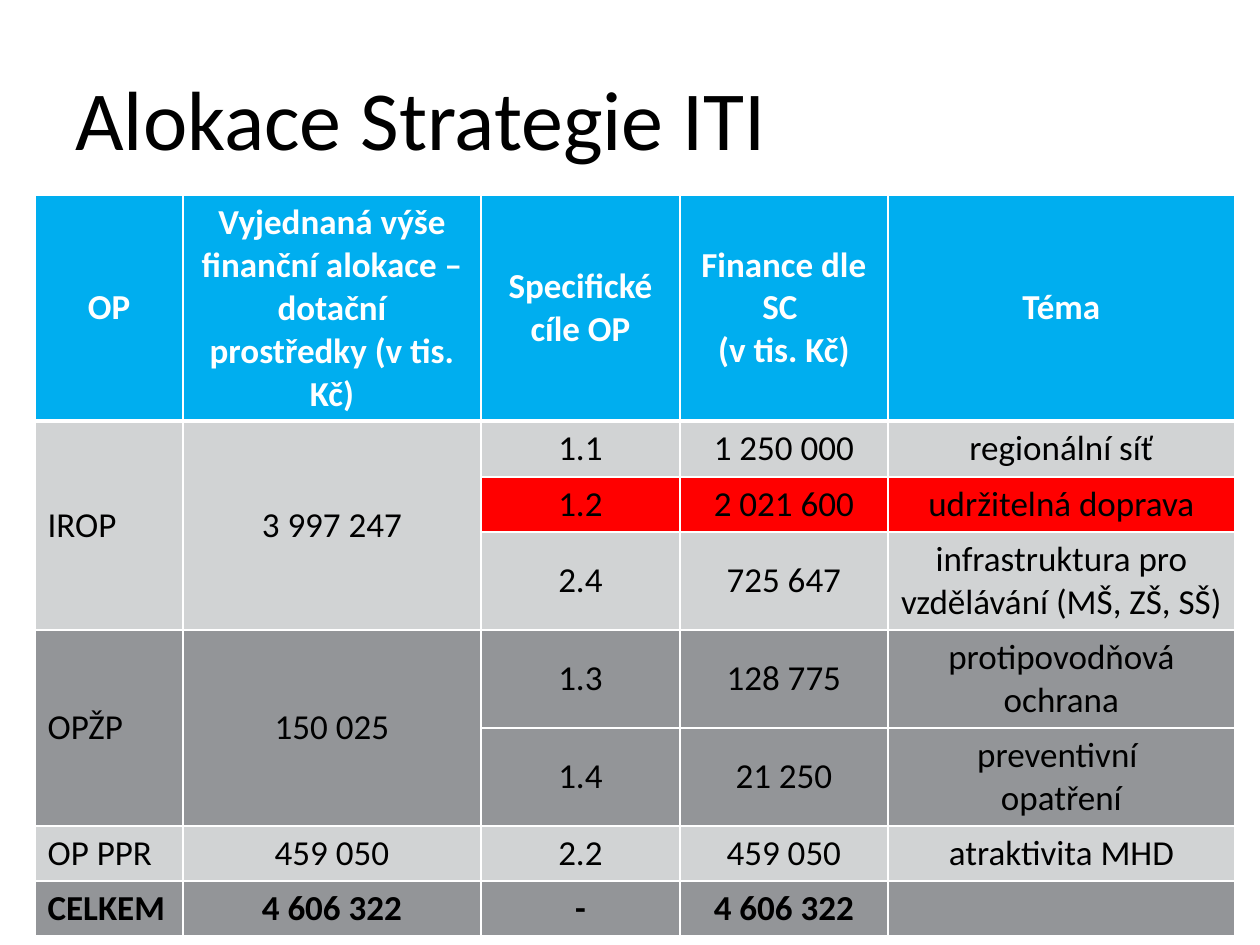
from dataclasses import dataclass

from lxml import etree
from pptx import Presentation, util as u
from pptx.dml.color import RGBColor
from pptx.enum import text
from pptx.oxml.ns import qn

PX = 914400 // 126


@dataclass(frozen=True)
class Theme:
    """Colours, font and type sizes of the slide."""
    font: str = "Calibri"
    title: int = 48
    body: int = 20
    black: str = "000000"
    white: str = "FFFFFF"
    blue: str = "00AEEF"
    light: str = "D1D3D4"
    dark: str = "939598"
    red: str = "FF0000"


T = Theme()
COLUMNS = [148, 298, 199, 208, 347]
HEADER = ["OP", "Vyjednaná výše finanční alokace – dotační prostředky (v tis. Kč)",
          "Specifické cíle OP", "Finance dle SC \v(v tis. Kč)", "Téma"]
ROWS = [
    (226, T.blue, HEADER),
    (56, T.light, ["IROP", "3 997 247", "1.1", "1 250 000", "regionální síť"]),
    (55, T.red, ["", "", "1.2", "2 021 600", "udržitelná doprava"]),
    (98, T.light, ["", "", "2.4", "725 647", "infrastruktura pro vzdělávání (MŠ, ZŠ, SŠ)"]),
    (98, T.dark, ["OPŽP", "150 025", "1.3", "128 775", "protipovodňová ochrana"]),
    (98, T.dark, ["", "", "1.4", "21 250", "preventivní \nopatření"]),
    (55, T.light, ["OP PPR", "459 050", "2.2", "459 050", "atraktivita MHD"]),
    (55, T.dark, ["CELKEM", "4 606 322", "-", "4 606 322", ""]),
]
MERGED_ROWS = [(1, 3), (4, 5)]


def px(*values):
    """Turn pixel lengths into EMU."""
    return [u.Emu(v * PX) for v in values]


def format_text(tf, size, color, bold, align):
    """Apply one format to every paragraph of a text frame."""
    values = {"name": T.font, "size": u.Pt(size), "bold": bold}
    for p in tf.paragraphs:
        p.alignment = align
        for name, value in values.items():
            setattr(p.font, name, value)
        p.font.color.rgb = RGBColor.from_string(color)


def add_title(slide, words):
    """Add the slide heading."""
    tf = slide.shapes.add_textbox(*px(63, 38, 1134, 157)).text_frame
    tf.word_wrap = True
    tf.vertical_anchor = text.MSO_ANCHOR.MIDDLE
    tf.text = words
    format_text(tf, T.title, T.black, False, text.PP_ALIGN.LEFT)


def add_borders(cell, widths):
    """Draw white borders of the given point widths, keyed by side."""
    tc_pr = cell._tc.get_or_add_tcPr()
    for side, width in widths.items():
        ln = etree.SubElement(tc_pr, qn(f"a:ln{side}"), w=str(u.Pt(width)))
        fill = etree.SubElement(ln, qn("a:solidFill"))
        etree.SubElement(fill, qn("a:srgbClr"), val=T.white)


def fill_cell(cell, words, row, col, color):
    """Write and style one table cell."""
    header, total = row == 0, row == len(ROWS) - 1
    cell.text = words
    cell.vertical_anchor = text.MSO_ANCHOR.MIDDLE
    left = col == 0 and not header
    format_text(cell.text_frame, T.body, T.white if header else T.black, header or total,
                text.PP_ALIGN.LEFT if left else text.PP_ALIGN.CENTER)
    add_borders(cell, {"L": 1, "R": 1, "T": 3 if row == 1 else 1, "B": 3 if header else 1})
    cell.fill.solid()
    cell.fill.fore_color.rgb = RGBColor.from_string(color)


def add_allocation_table(slide):
    """Add the table of allocations by programme."""
    heights = [height for height, _, _ in ROWS]
    table = slide.shapes.add_table(len(ROWS), len(COLUMNS),
                                   *px(35, 195, sum(COLUMNS), sum(heights))).table
    table.horz_banding = False
    for column, width in zip(table.columns, px(*COLUMNS)):
        column.width = width
    for i, (height, color, words) in enumerate(ROWS):
        table.rows[i].height = px(height)[0]
        for j, word in enumerate(words):
            fill_cell(table.cell(i, j), word, i, j, color)
    for first, last in MERGED_ROWS:
        for j in range(2):
            table.cell(first, j).merge(table.cell(last, j))


def main():
    """Build and save the slide."""
    prs = Presentation()
    prs.slide_width, prs.slide_height = px(1260, 945)
    slide = prs.slides.add_slide(prs.slide_layouts[6])
    add_title(slide, "Alokace Strategie ITI")
    add_allocation_table(slide)
    prs.save("out.pptx")


if __name__ == "__main__":
    main()
